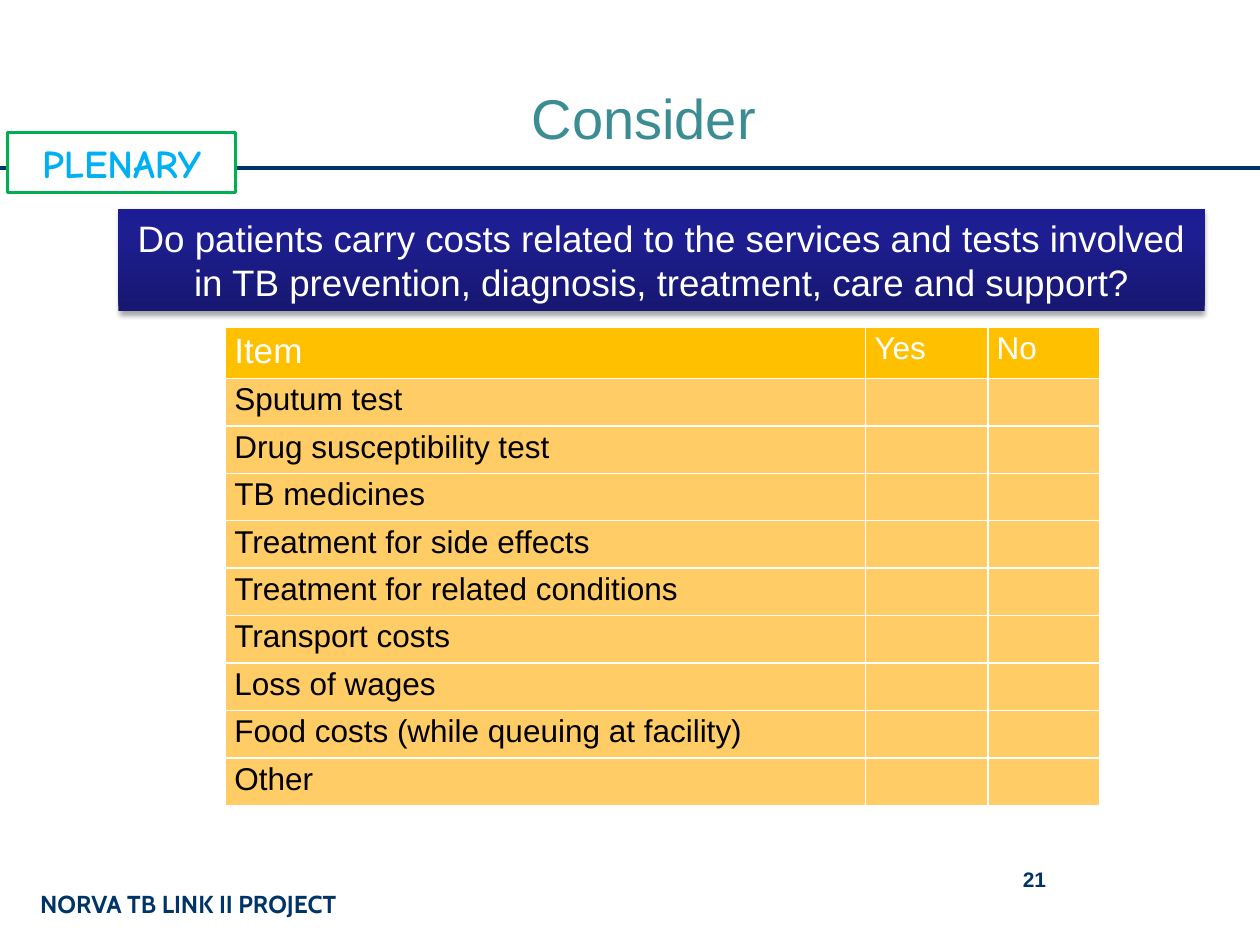
from copy import deepcopy

from lxml.etree import SubElement
from pptx import Presentation
from pptx.dml.color import RGBColor
from pptx.enum.shapes import MSO_CONNECTOR, MSO_SHAPE
from pptx.enum.text import MSO_ANCHOR, PP_ALIGN
from pptx.oxml.ns import qn
from pptx.util import Inches, Pt

WHITE = RGBColor(0xFF, 0xFF, 0xFF)
BLACK = RGBColor(0x00, 0x00, 0x00)
NAVY = RGBColor(0x00, 0x33, 0x66)
TEAL = RGBColor(0x3C, 0x8C, 0x93)
GREEN = RGBColor(0x00, 0xB0, 0x50)
SKY = RGBColor(0x00, 0xB0, 0xF0)
AMBER = RGBColor(0xFF, 0xC0, 0x00)
LIGHT_AMBER = RGBColor(0xFF, 0xCC, 0x66)
BANNER_STOPS = [
    (0, RGBColor(0x17, 0x17, 0x71)),
    (0.8, RGBColor(0x1E, 0x1E, 0x93)),
    (1, RGBColor(0x1C, 0x1C, 0x96)),
]

HEADINGS = ["Item", "Yes", "No"]
COST_ITEMS = [
    "Sputum test",
    "Drug susceptibility test",
    "TB medicines",
    "Treatment for side effects",
    "Treatment for related conditions",
    "Transport costs",
    "Loss of wages",
    "Food costs (while queuing at facility)",
    "Other",
]
TABLE_HEIGHT = 3.79
HEADER_HEIGHT = 0.4
QUESTION = (
    "Do patients carry costs related to the services and tests involved "
    "in TB prevention, diagnosis, treatment, care and support?"
)


def inches(*lengths):
    return [Inches(length) for length in lengths]


def write(frame, text, size, color, font="Arial", bold=False, align=PP_ALIGN.LEFT):
    frame.text = text
    frame.word_wrap = True
    para = frame.paragraphs[0]
    para.alignment = align
    para.font.size = Pt(size)
    for span in para.runs:
        span.font.size = Pt(size)
        span.font.name = font
        span.font.bold = bold
        span.font.color.rgb = color


def add_title(slide, text):
    title = slide.shapes.title
    title.left, title.top, title.width, title.height = inches(0.8, 0.16, 8.62, 1.09)
    write(title.text_frame, text, 32, TEAL, align=PP_ALIGN.CENTER)
    title.text_frame.vertical_anchor = MSO_ANCHOR.BOTTOM


def add_rule(slide):
    rule = slide.shapes.add_connector(MSO_CONNECTOR.STRAIGHT, *inches(0, 1.33, 10, 1.33))
    rule.line.color.rgb = NAVY
    rule.line.width = Pt(2.25)
    SubElement(rule._element.spPr, qn("a:effectLst"))


def add_label(slide, place, text, size, **style):
    box = slide.shapes.add_textbox(*inches(*place))
    write(box.text_frame, text, size, NAVY, bold=True, **style)


def add_rectangle(slide, place):
    box = slide.shapes.add_shape(MSO_SHAPE.RECTANGLE, *inches(*place))
    box.shadow.inherit = False
    box.text_frame.vertical_anchor = MSO_ANCHOR.MIDDLE
    return box


def add_tag(slide, text):
    tag = add_rectangle(slide, (0.06, 1.05, 1.81, 0.48))
    tag.fill.solid()
    tag.fill.fore_color.rgb = WHITE
    tag.line.color.rgb = GREEN
    tag.line.width = Pt(1.5)
    write(tag.text_frame, text, 22.5, SKY, "Comic Neue", True, PP_ALIGN.CENTER)


def fill_gradient(shape, stops):
    """Fill the shape with stops that run from bottom to top."""
    shape.fill.gradient()
    shape.fill.gradient_angle = 90
    stop_list = shape._element.spPr.find(".//" + qn("a:gsLst"))
    while len(stop_list) < len(stops):
        stop_list.append(deepcopy(stop_list[-1]))
    for stop, (position, color) in zip(shape.fill.gradient_stops, stops):
        stop.position = position
        stop.color.rgb = color


def add_shadow(shape):
    effects = shape._element.spPr.find(qn("a:effectLst"))
    shadow = SubElement(
        effects, qn("a:outerShdw"), blurRad=str(Pt(3.1)), dist=str(Pt(1.8)),
        dir="5400000", rotWithShape="0",
    )
    color = SubElement(shadow, qn("a:srgbClr"), val=str(BLACK))
    SubElement(color, qn("a:alpha"), val="35000")


def add_banner(slide, text):
    banner = add_rectangle(slide, (0.94, 1.66, 8.62, 0.81))
    fill_gradient(banner, BANNER_STOPS)
    banner.line.fill.background()
    add_shadow(banner)
    write(banner.text_frame, text, 21, WHITE, align=PP_ALIGN.CENTER)


def style_cell(cell, fill):
    cell.margin_left = cell.margin_right = Inches(0.07)
    cell.margin_top, cell.margin_bottom = inches(0.03, 0.04)
    properties = cell._tc.get_or_add_tcPr()
    for side in ("lnL", "lnR", "lnT", "lnB"):
        border = SubElement(properties, qn(f"a:{side}"), w=str(Pt(1)))
        paint = SubElement(border, qn("a:solidFill"))
        SubElement(paint, qn("a:srgbClr"), val=str(WHITE))
    cell.fill.solid()
    cell.fill.fore_color.rgb = fill


def add_cost_table(slide):
    rows = [HEADINGS] + [[item, "", ""] for item in COST_ITEMS]
    place = inches(1.79, 2.6, 6.94, TABLE_HEIGHT)
    table = slide.shapes.add_table(len(rows), len(HEADINGS), *place).table
    table.horz_banding = False
    for column, width in zip(table.columns, inches(5.08, 0.97, 0.89)):
        column.width = width
    item_height = (TABLE_HEIGHT - HEADER_HEIGHT) / len(COST_ITEMS)
    for r, texts in enumerate(rows):
        table.rows[r].height = Inches(item_height if r else HEADER_HEIGHT)
        for c, text in enumerate(texts):
            cell = table.cell(r, c)
            style_cell(cell, LIGHT_AMBER if r else AMBER)
            size = 20 if text == "Item" else 18
            write(cell.text_frame, text, size, BLACK if r else WHITE)


def main():
    deck = Presentation()
    deck.slide_width, deck.slide_height = inches(10, 7.5)
    slide = deck.slides.add_slide(deck.slide_layouts[5])
    add_rule(slide)
    add_label(slide, (0.22, 7.01, 3.33, 0.33), "NORVA TB LINK II PROJECT", 14, font="Cabin")
    add_title(slide, "Consider")
    add_tag(slide, "PLENARY")
    add_cost_table(slide)
    add_banner(slide, QUESTION)
    add_label(slide, (7.17, 6.83, 2.08, 0.5), "21", 12, align=PP_ALIGN.CENTER)
    deck.save("out.pptx")


if __name__ == "__main__":
    main()
